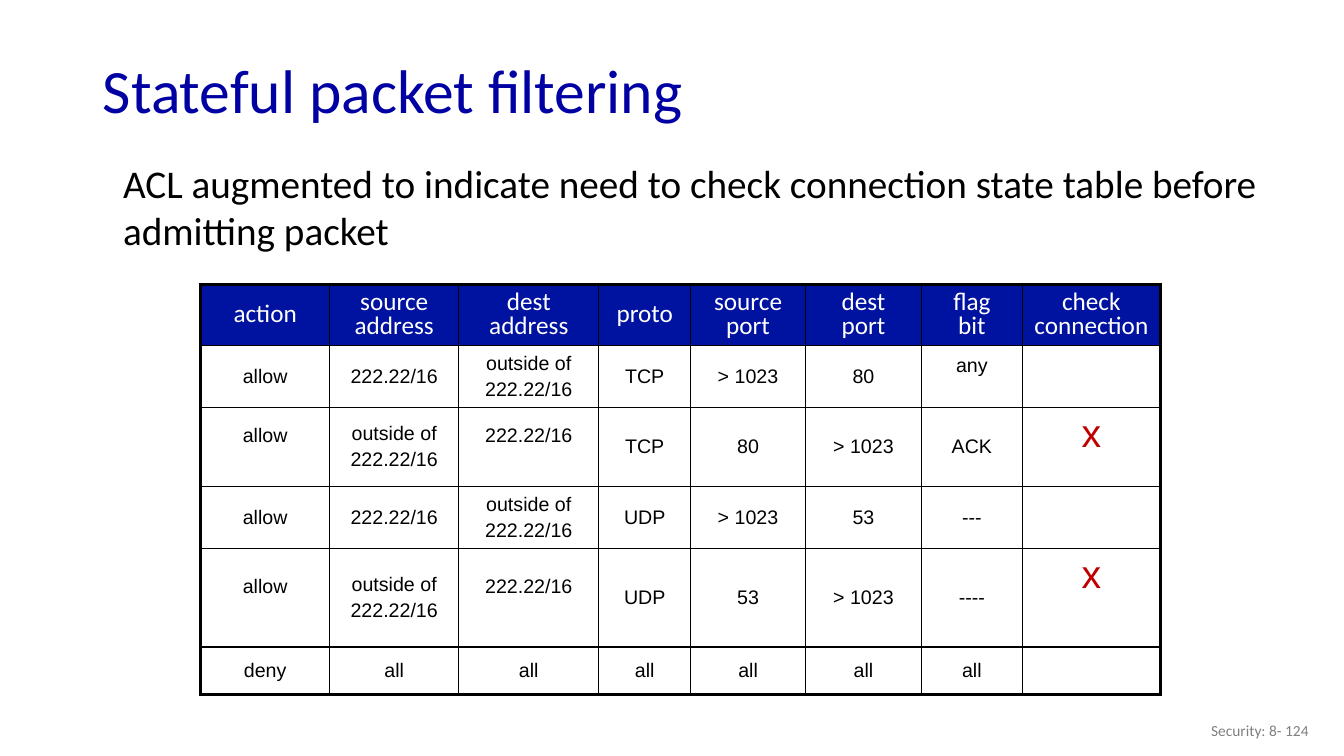
from lxml.etree import SubElement
from pptx import Presentation
from pptx.dml.color import RGBColor
from pptx.enum.text import MSO_ANCHOR, MSO_AUTO_SIZE, PP_ALIGN
from pptx.oxml.ns import qn
from pptx.util import Inches, Pt

NAVY = RGBColor(0x00, 0x00, 0xA3)
BLUE = RGBColor(0x00, 0x12, 0xA0)
WHITE = RGBColor(0xFF, 0xFF, 0xFF)
BLACK = RGBColor(0x00, 0x00, 0x00)
RED = RGBColor(0xC0, 0x00, 0x00)
GRAY = RGBColor(0x80, 0x80, 0x80)

HEAD = {"size": Pt(18), "name": "Calibri", "color": WHITE}
ENTRY = {"size": Pt(14), "name": "Arial", "color": BLACK}
MARK = {"size": Pt(28), "name": "Arial", "color": RED}

COLS = [1.28, 1.28, 1.39, 0.91, 1.14, 1.15, 1, 1.37]
HEIGHTS = [0.61, 0.61, 0.79, 0.61, 0.98, 0.47]
OUT = "outside of\n222.22/16"
NET = "222.22/16"
RULES = [
    ["action", "source\naddress", "dest\naddress", "proto",
     "source\nport", "dest\nport", "flag\nbit", "check connection"],
    ["allow", NET, OUT, "TCP", "> 1023", "80", "any", ""],
    ["allow", OUT, NET, "TCP", "80", "> 1023", "ACK", "x"],
    ["allow", NET, OUT, "UDP", "> 1023", "53", "---", ""],
    ["allow", OUT, NET, "UDP", "53", "> 1023", "----", "x"],
    ["deny"] + ["all"] * 6 + [""],
]
# Cells whose text sits above the middle
RAISED = {(1, 6), (2, 0), (2, 2), (4, 0), (4, 2)}


def style(frame, font, **format):
    for para in frame.paragraphs:
        for key, value in format.items():
            setattr(para, key, value)
        for run in para.runs:
            run.font.size = font["size"]
            run.font.name = font["name"]
            run.font.color.rgb = font["color"]


def place(shape, box):
    for key, value in zip(("left", "top", "width", "height"), box):
        setattr(shape, key, Inches(value))


def fill_text(shape, box, text, font, anchor, **format):
    place(shape, box)
    frame = shape.text_frame
    frame.text = text
    frame.word_wrap = True
    frame.auto_size = MSO_AUTO_SIZE.NONE
    frame.vertical_anchor = anchor
    style(frame, font, **format)


def add_title(slide, box):
    fill_text(slide.shapes.title, box, "Stateful packet filtering",
              {"size": Pt(44), "name": "Calibri", "color": NAVY},
              MSO_ANCHOR.MIDDLE, alignment=PP_ALIGN.LEFT, line_spacing=0.9)


def add_body(slide, box):
    body = slide.placeholders[1]
    fill_text(body, box,
              "ACL augmented to indicate need to check connection state "
              "table before admitting packet",
              {"size": Pt(28), "name": "Calibri", "color": BLACK},
              MSO_ANCHOR.TOP)
    # Plain paragraph without bullet or indent
    props = body.text_frame.paragraphs[0]._p.get_or_add_pPr()
    props.set("marL", "0")
    props.set("indent", "0")
    SubElement(props, qn("a:buNone"))


def add_footer(slide, box):
    note = slide.shapes.add_textbox(0, 0, 0, 0)
    fill_text(note, box, "Security: 8- 124",
              {"size": Pt(11), "name": "Calibri", "color": GRAY},
              MSO_ANCHOR.MIDDLE, alignment=PP_ALIGN.RIGHT)


def add_edges(cell, row, col):
    outer = {"L": col == 0, "R": col == len(COLS) - 1,
             "T": row == 0, "B": row == len(HEIGHTS) - 1}
    props = cell._tc.get_or_add_tcPr()
    for side, thick in outer.items():
        line = SubElement(props, qn("a:ln" + side),
                          w=str(Pt(2.25 if thick else 1)))
        fill = SubElement(line, qn("a:solidFill"))
        SubElement(fill, qn("a:srgbClr"), val=str(BLACK))


def fill_cell(cell, row, col, text):
    add_edges(cell, row, col)
    cell.fill.solid()
    cell.fill.fore_color.rgb = WHITE if row else BLUE
    cell.text = text
    cell.vertical_anchor = MSO_ANCHOR.TOP if text == "x" else MSO_ANCHOR.MIDDLE
    if (row, col) in RAISED:
        cell.margin_bottom = Inches(0.27)
    if row == 0:
        style(cell.text_frame, HEAD, alignment=PP_ALIGN.CENTER,
              line_spacing=0.8)
    else:
        style(cell.text_frame, MARK if text == "x" else ENTRY,
              alignment=PP_ALIGN.CENTER, space_before=Pt(2.8))


def add_rules(slide, box):
    table = slide.shapes.add_table(len(HEIGHTS), len(COLS),
                                   *map(Inches, box)).table
    table.first_row = table.horz_banding = False
    for col, width in zip(table.columns, COLS):
        col.width = Inches(width)
    for row, height in zip(table.rows, HEIGHTS):
        row.height = Inches(height)
    for row, texts in enumerate(RULES):
        for col, text in enumerate(texts):
            fill_cell(table.cell(row, col), row, col, text)


def main():
    deck = Presentation()
    deck.slide_width, deck.slide_height = Inches(13.33), Inches(7.5)
    slide = deck.slides.add_slide(deck.slide_layouts[1])
    add_footer(slide, (10.08, 7.05, 3, 0.4))
    add_title(slide, (0.92, 0.44, 11.5, 0.98))
    add_rules(slide, (1.99, 2.82, sum(COLS), sum(HEIGHTS)))
    add_body(slide, (1.12, 1.53, 11.95, 1.21))
    deck.save("out.pptx")


if __name__ == "__main__":
    main()
